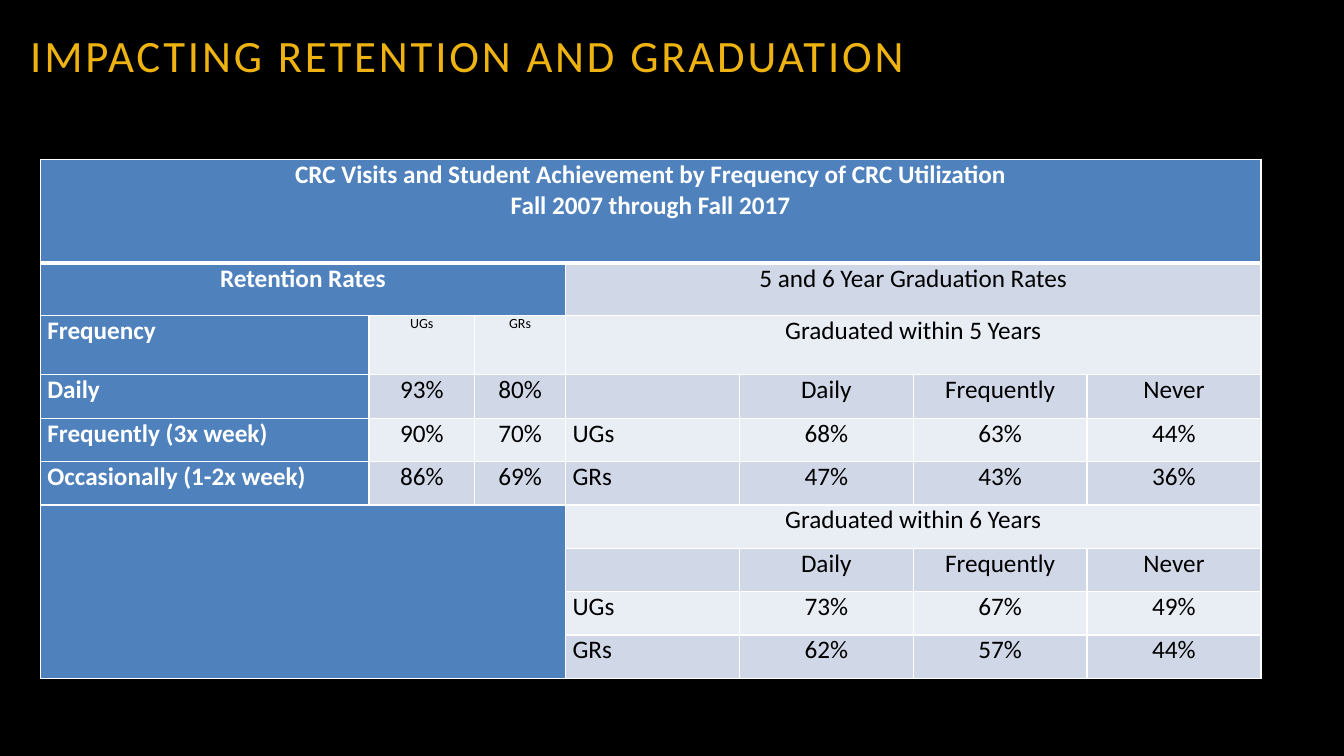
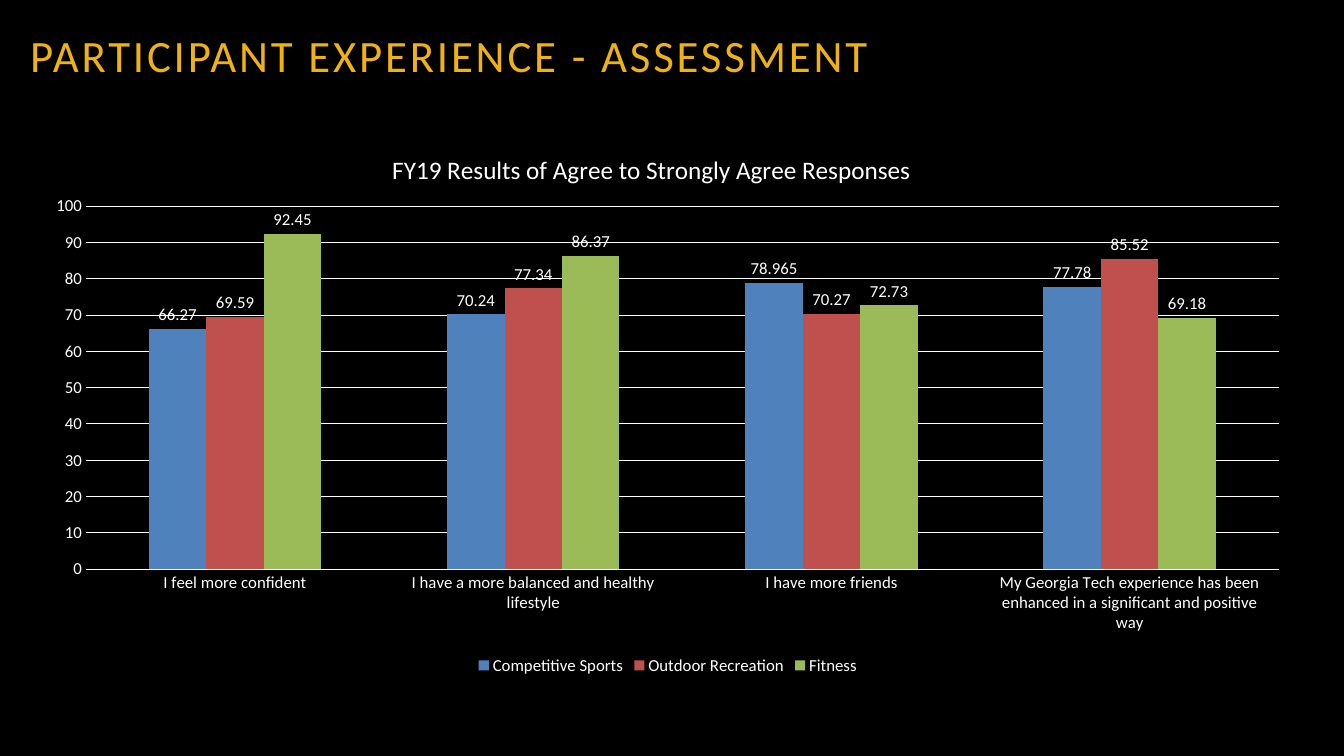
from lxml import etree
from pptx import Presentation
from pptx import util as u
from pptx.chart import data
from pptx.dml.color import RGBColor
from pptx.enum import chart as ch, text
from pptx.oxml import ns, parse_xml

COLORS = {"bg": "000000", "gold": "EEB211", "white": "FFFFFF", "black": "000000",
          "blue": "4F81BD", "red": "C0504D", "green": "9BBB59",
          "odd": "D0D8E8", "even": "E9EDF4"}
FONT = "Calibri"
GRID = u.Inches(0.1)  # one grid column or row


def units(*cells):
    return [int(n * GRID) for n in cells]


def rgb(name):
    return RGBColor.from_string(COLORS[name])


def style(font, size, color, bold=False):
    font.name, font.size, font.bold = FONT, u.Pt(size), bold
    font.color.rgb = rgb(color)


def write(tf, words, size=18, color="black", bold=False, align="LEFT", spacing=0):
    """Fill a text frame, one paragraph for each line of words."""
    for i, line in enumerate(words.split("\n")):
        p = tf.add_paragraph() if i else tf.paragraphs[0]
        p.alignment = getattr(text.PP_ALIGN, align)
        r = p.add_run()
        r.text = line
        style(r.font, size, color, bold)
        if spacing:
            r._r.get_or_add_rPr().set("spc", str(spacing * 100))


def set_borders(cell, **widths):
    """Draw white borders; widths in points for L, R, T and B."""
    tcPr = cell._tc.get_or_add_tcPr()
    for i, side in enumerate("LRTB"):
        tcPr.insert(i, parse_xml(
            f'<a:ln{side} {ns.nsdecls("a")} w="{u.Pt(widths.get(side, 1))}"><a:solidFill>'
            f'<a:srgbClr val="{COLORS["white"]}"/></a:solidFill></a:ln{side}>'))


def place(element, inner=False, **shares):
    """Fix the place of a chart part, in shares of the chart."""
    for old in element.findall(ns.qn("c:layout")):
        element.remove(old)
    layout = etree.Element(ns.qn("c:layout"))
    manual = etree.SubElement(layout, ns.qn("c:manualLayout"))
    parts = {"layoutTarget": "inner"} if inner else {}
    parts.update(xMode="edge", yMode="edge", **shares)
    for tag, val in parts.items():
        etree.SubElement(manual, ns.qn("c:" + tag)).set("val", str(val))
    tx = element.find(ns.qn("c:tx"))
    element.insert(0 if tx is None else 1, layout)


class Deck:
    def __init__(self):
        self.prs = Presentation()
        self.prs.slide_width, self.prs.slide_height = units(133.33, 75)
        self.s = None

    def slide(self, title, width):
        self.s = self.prs.slides.add_slide(self.prs.slide_layouts[5])
        fill = self.s.background.fill
        fill.solid()
        fill.fore_color.rgb = rgb("bg")
        sp = self.s.shapes.title
        sp.left, sp.top, sp.width, sp.height = units(0, 0, width, 10.8)
        sp.fill.solid()
        sp.fill.fore_color.rgb = rgb("bg")
        tf = sp.text_frame
        tf.auto_size = text.MSO_AUTO_SIZE.NONE
        tf.vertical_anchor = text.MSO_ANCHOR.MIDDLE
        tf.margin_left = 3 * GRID
        write(tf, title, size=32, color="gold", spacing=2)

    def table(self, left, top, cols, rows, cells, spans, small):
        """Column 0 and the top rows are headings; other rows are banded."""
        box = units(left, top, sum(cols), sum(rows))
        tbl = self.s.shapes.add_table(len(rows), len(cols), *box).table
        for lines, sizes, key in ((tbl.columns, cols, "width"), (tbl.rows, rows, "height")):
            for line, size in zip(lines, sizes):
                setattr(line, key, units(size)[0])
        for (r, c), (high, wide) in spans.items():
            tbl.cell(r, c).merge(tbl.cell(r + high - 1, c + wide - 1))
        for r, row in enumerate(cells):
            for c, words in enumerate(row):
                cell = tbl.cell(r, c)
                head = r == 0 or c == 0 or (r == 1 and c < 3)
                cell.fill.solid()
                cell.fill.fore_color.rgb = rgb("blue" if head else ("even", "odd")[r % 2])
                set_borders(cell, T=3 if r == 1 else 1, B=3 if r == 0 else 1)
                cell.margin_left = cell.margin_right = u.Inches(0.07)
                cell.margin_top = cell.margin_bottom = 0
                if words:
                    label = c in (0, 3) and (r, c) not in spans
                    write(cell.text_frame, words, size=10 if (r, c) in small else 18,
                          color="white" if head else "black", bold=head,
                          align="LEFT" if label else "CENTER")

    def columns(self, left, top, width, height, title, cats, series):
        cd = data.CategoryChartData()
        cd.categories = cats
        for name, vals, _ in series:
            cd.add_series(name, vals)
        chart = self.s.shapes.add_chart(ch.XL_CHART_TYPE.COLUMN_CLUSTERED,
                                        *units(left, top, width, height), cd).chart
        style(chart.font, 10, "white")
        # Title and plot area
        write(chart.chart_title.text_frame, title, color="white", align="CENTER")
        chart.chart_title.include_in_layout = False
        place(chart.chart_title._element, x=0.28, y=0.04)
        place(chart._chartSpace.chart.plotArea, inner=True, x=0.043, y=0.145, w=0.937, h=0.656)
        # Legend
        chart.has_legend = True
        chart.legend.position = ch.XL_LEGEND_POSITION.BOTTOM
        chart.legend.include_in_layout = False
        style(chart.legend.font, 12, "white")
        # Axes
        cat, val = chart.category_axis, chart.value_axis
        for axis in (cat, val):
            axis.major_tick_mark = axis.minor_tick_mark = ch.XL_TICK_MARK.NONE
            style(axis.tick_labels.font, 12, "white")
        val.minimum_scale, val.maximum_scale, val.major_unit = 0, 100, 10
        val.format.line.fill.background()
        for line in (cat.format.line, val.major_gridlines.format.line):
            line.color.rgb, line.width = rgb("white"), u.Pt(0.75)
        # Bars and their labels
        plot = chart.plots[0]
        plot.gap_width, plot.overlap, plot.vary_by_categories = 219, 0, False
        for bars, (_, _, color) in zip(plot.series, series):
            bars.format.fill.solid()
            bars.format.fill.fore_color.rgb = rgb(color)
            labels = bars.data_labels
            labels.show_value = True
            labels.position = ch.XL_LABEL_POSITION.OUTSIDE_END
            style(labels.font, 12, "white")


def main():
    deck = Deck()

    # Retention and graduation table
    rates = ["Daily", "Frequently", "Never"]
    gap = [None] * 3
    deck.slide("IMPACTING RETENTION AND GRADUATION", 95)
    deck.table(
        4, 15.8, [32.6, 10.5, 9] + [17.25] * 4, [10.3, 5.2, 5.9] + [4.3] * 7,
        [["CRC Visits and Student Achievement by Frequency of CRC Utilization\n"
          "Fall 2007 through Fall 2017"] + gap * 2,
         ["Retention Rates", None, None, "5 and 6 Year Graduation Rates"] + gap,
         ["Frequency", "UGs", "GRs", "Graduated within 5 Years"] + gap,
         ["Daily", "93%", "80%", None] + rates,
         ["Frequently (3x week)", "90%", "70%", "UGs", "68%", "63%", "44%"],
         ["Occasionally (1-2x week)", "86%", "69%", "GRs", "47%", "43%", "36%"],
         gap + ["Graduated within 6 Years"] + gap,
         gap + [None] + rates,
         gap + ["UGs", "73%", "67%", "49%"],
         gap + ["GRs", "62%", "57%", "44%"]],
        spans={(0, 0): (1, 7), (1, 0): (1, 3), (1, 3): (1, 4), (2, 3): (1, 4),
               (6, 0): (4, 3), (6, 3): (1, 4)},
        small={(2, 1), (2, 2)})

    # Participant survey chart
    deck.slide("PARTICIPANT EXPERIENCE - ASSESSMENT", 95.6)
    deck.columns(
        3.1, 12.5, 126.3, 54.9, "FY19 Results of Agree to Strongly Agree Responses",
        ["I feel more confident", "I have a more balanced and healthy lifestyle",
         "I have more friends",
         "My Georgia Tech experience has been enhanced in a significant and positive way"],
        [("Competitive Sports", (66.27, 70.24, 78.965, 77.78), "blue"),
         ("Outdoor Recreation", (69.59, 77.34, 70.27, 85.52), "red"),
         ("Fitness", (92.45, 86.37, 72.73, 69.18), "green")])

    deck.prs.save("out.pptx")


if __name__ == "__main__":
    main()
